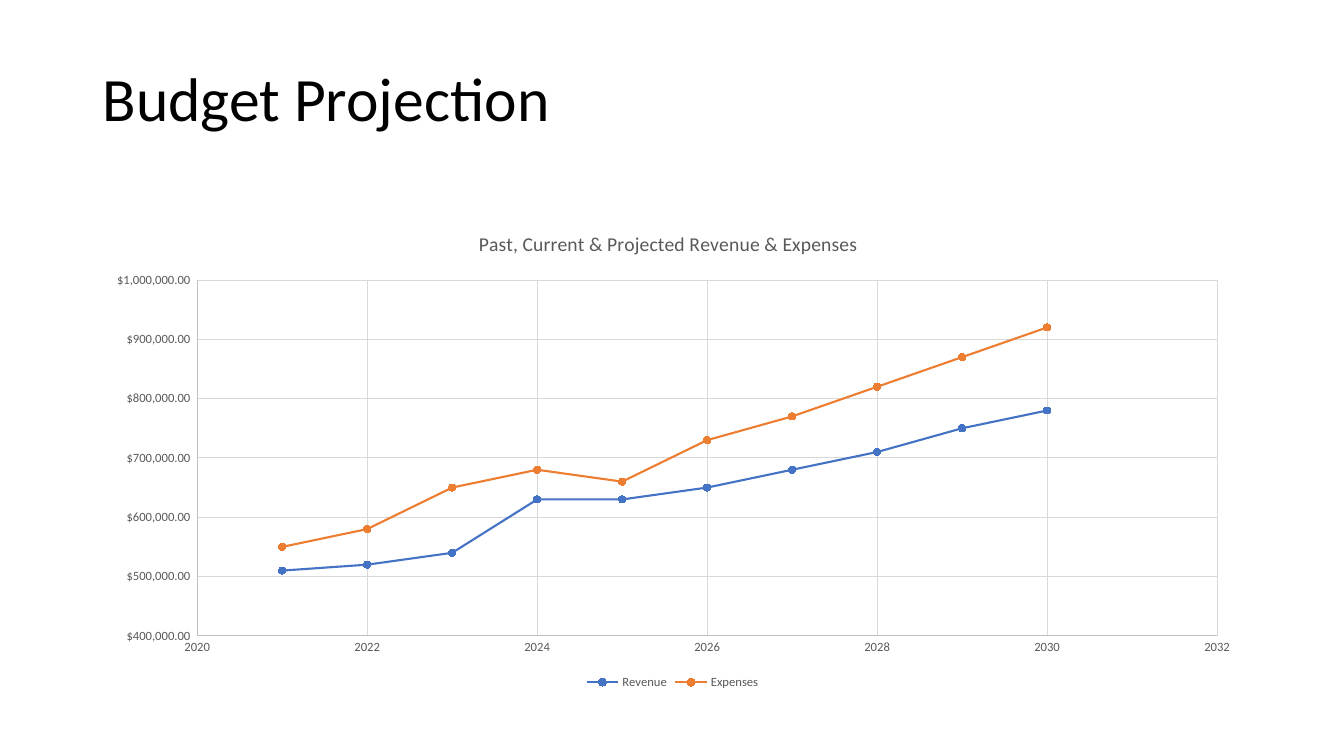
import dataclasses

import pptx
import pptx.chart.data
import pptx.dml.color
import pptx.enum.chart
import pptx.enum.text
import pptx.oxml
import pptx.oxml.ns
import pptx.util

Cm = pptx.util.Cm
Pt = pptx.util.Pt
Enum = pptx.enum.chart


@dataclasses.dataclass
class Theme:
    """Hold the colours, type sizes and line widths of the deck."""

    face: str = "Calibri"
    ink: str = "000000"
    soft: str = "595959"
    axis: str = "BFBFBF"
    grid: str = "D9D9D9"
    blue: str = "4472C4"
    rust: str = "ED7D31"
    head: int = 44
    name: int = 14
    base: int = 10
    small: int = 9
    thin: float = 0.75
    bold: float = 1.5


class Page:
    """Draw styled elements on the current slide."""

    def __init__(self, slide, theme):
        self.slide = slide
        self.theme = theme

    def put(self, item, values):
        for key, value in values.items():
            setattr(item, key, value)

    def type(self, font, size, tint):
        self.put(font, {"name": self.theme.face, "size": Pt(size), "bold": False})
        font.color.rgb = pptx.dml.color.RGBColor.from_string(tint)

    def line(self, form, tint, width):
        form.line.color.rgb = pptx.dml.color.RGBColor.from_string(tint)
        form.line.width = Pt(width)

    def place(self, node, index, **spots):
        qn = pptx.oxml.ns.qn
        for old in node.findall(qn("c:layout")):
            node.remove(old)
        body = "".join(f'<c:{key} val="{val}"/>' for key, val in spots.items())
        node.insert(index, pptx.oxml.parse_xml(
            f'<c:layout {pptx.oxml.ns.nsdecls("c")}>'
            f"<c:manualLayout>{body}</c:manualLayout></c:layout>"))

    def title(self, text, box):
        frame = self.slide.shapes.add_textbox(*map(Cm, box)).text_frame
        self.put(frame, {"word_wrap": True,
                         "vertical_anchor": pptx.enum.text.MSO_ANCHOR.BOTTOM})
        para = frame.paragraphs[0]
        self.put(para, {"text": text, "line_spacing": 0.9})
        self.type(para.runs[0].font, self.theme.head, self.theme.ink)

    def scale(self, axis, code, values):
        theme = self.theme
        self.put(axis, {"has_major_gridlines": True,
                        "major_tick_mark": Enum.XL_TICK_MARK.NONE,
                        "minor_tick_mark": Enum.XL_TICK_MARK.NONE, **values})
        self.line(axis.format, theme.axis, theme.thin)
        self.line(axis.major_gridlines.format, theme.grid, theme.thin)
        self.type(axis.tick_labels.font, theme.small, theme.soft)
        self.put(axis.tick_labels, {"number_format": code,
                                    "number_format_is_linked": False})

    def series(self, line, tint):
        line.smooth = False
        self.line(line.format, tint, self.theme.bold)
        mark = line.marker
        self.put(mark, {"style": Enum.XL_MARKER_STYLE.CIRCLE, "size": 5})
        mark.format.fill.solid()
        mark.format.fill.fore_color.rgb = pptx.dml.color.RGBColor.from_string(tint)
        self.line(mark.format, tint, self.theme.thin)

    def chart(self, name, years, rows, box):
        theme = self.theme
        data = pptx.chart.data.XyChartData()
        for label, sums, _ in rows:
            line = data.add_series(label)
            for year, total in zip(years, sums):
                line.add_data_point(year, total * 10000)
        chart = self.slide.shapes.add_chart(
            Enum.XL_CHART_TYPE.XY_SCATTER_LINES, *map(Cm, box), data).chart
        self.type(chart.font, theme.base, theme.ink)
        self.put(chart, {"has_title": True, "has_legend": True})

        frame = chart.chart_title.text_frame
        frame.text = name
        self.type(frame.paragraphs[0].runs[0].font, theme.name, theme.soft)
        self.place(chart.chart_title._element, 1,
                   xMode="edge", yMode="edge", x=0.33, y=0.03)
        self.place(chart._chartSpace.chart.plotArea, 0,
                   layoutTarget="inner", xMode="edge", yMode="edge",
                   x=0.09, y=0.14, w=0.88, h=0.74)

        self.put(chart.legend, {"position": Enum.XL_LEGEND_POSITION.BOTTOM,
                                "include_in_layout": False})
        self.type(chart.legend.font, theme.small, theme.soft)
        self.scale(chart.category_axis, "0",
                   {"minimum_scale": 2020, "maximum_scale": 2032, "major_unit": 2})
        self.scale(chart.value_axis, '"$"#,##0.00_)',
                   {"minimum_scale": 400000, "maximum_scale": 1000000,
                    "major_unit": 100000})

        plot = chart.plots[0]
        plot.vary_by_categories = False
        for line, (_, _, tint) in zip(plot.series, rows):
            self.series(line, tint)


def main():
    deck = pptx.Presentation()
    deck.slide_width, deck.slide_height = Cm(33.87), Cm(19.05)
    theme = Theme()
    page = Page(deck.slides.add_slide(deck.slide_layouts[6]), theme)
    page.title("Budget Projection", (2.34, 0.71, 29.18, 2.82))
    rows = (
        ("Revenue", (51, 52, 54, 63, 63, 65, 68, 71, 75, 78), theme.blue),
        ("Expenses", (55, 58, 65, 68, 66, 73, 77, 82, 87, 92), theme.rust),
    )
    page.chart("Past, Current & Projected Revenue & Expenses",
               range(2021, 2031), rows, (2.34, 5.36, 29.21, 12.12))
    deck.save("out.pptx")


if __name__ == "__main__":
    main()
